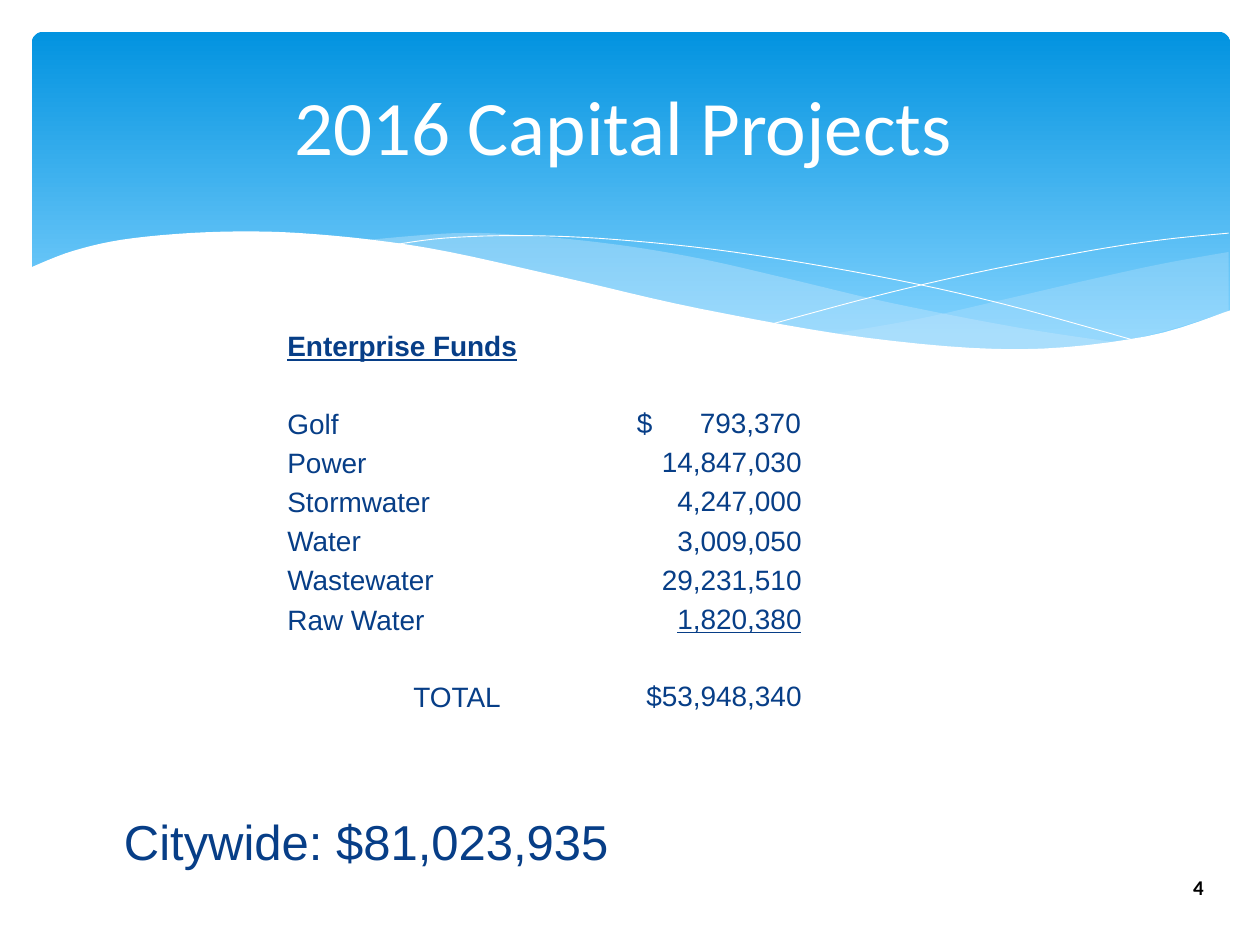
"""Build the 2016 capital projects slide with its wave banner."""
from lxml.etree import SubElement
from pptx import Presentation
from pptx.dml.color import RGBColor
from pptx.enum.shapes import MSO_SHAPE
from pptx.enum.text import MSO_ANCHOR, MSO_AUTO_SIZE, PP_ALIGN
from pptx.oxml.ns import qn
from pptx.util import Cm, Pt

SKY = RGBColor(0x02, 0x93, 0xE0)
LIGHT_SKY = RGBColor(0x83, 0xD3, 0xFE)
MIST = RGBColor(0xC6, 0xE7, 0xFC)
NAVY = RGBColor(0x07, 0x3E, 0x87)
WHITE = RGBColor(0xFF, 0xFF, 0xFF)
BLACK = RGBColor(0, 0, 0)

LINE_GAP, BLOCK_GAP, FIRST_GAP = 3.2, 25, 2.2

RIGHT_SWELL = (
    [(24.77, 5.08), (23.37, 5.33), (21.87, 5.66), (20.45, 5.99), (18.52, 6.43), (16.79, 6.73)],
    [(16.79, 6.73), (18.59, 6.96), (20.4, 7.06), (22.15, 6.96), (23.57, 6.65), (24.77, 6.27)],
)
MIDDLE_SWELL = (
    [(22.68, 6.93), (20.5, 6.6), (17.93, 6.1), (15.98, 5.64), (14.1, 5.21),
     (12.42, 4.93), (10.67, 4.75), (9.17, 4.7), (7.26, 4.85)],
    [(7.26, 4.85), (9.19, 5.16), (11.4, 5.64), (14.38, 6.3), (16.51, 6.71),
     (18.69, 6.99), (20.5, 7.06), (21.79, 7.02), (22.68, 6.93)],
)
FALLING_THREAD = [(7.85, 4.95), (8.97, 4.8), (10.57, 4.75), (12.42, 4.83),
                  (14.78, 5.08), (17.65, 5.56), (20.19, 6.12), (23.04, 6.91)]
RISING_THREAD = [(15.57, 6.53), (17.65, 5.97), (19.71, 5.49), (22, 5.05),
                 (23.47, 4.83), (24.77, 4.7)]
SHORE = [(24.82, 6.25), (23.11, 6.78), (20.55, 7.04), (17.48, 6.81), (14.1, 6.22),
         (11.35, 5.59), (8.64, 5), (6.35, 4.72), (4.5, 4.67), (2.69, 4.8),
         (1.5, 5.05), (0.58, 5.41)]
SHORE_BASE = [(0.58, 8.36), (24.82, 8.36)]

FUNDS = [("Golf", "$\t793,370"), ("Power", "14,847,030"), ("Stormwater", "4,247,000"),
         ("Water", "3,009,050"), ("Wastewater", "29,231,510"), ("Raw Water", "1,820,380")]


def smooth_curve(knots, steps=6):
    """Return points along a Catmull-Rom curve through the knots."""
    padded = [knots[0], *knots, knots[-1]]
    points = [knots[0]]
    for a, b, c, d in zip(padded, padded[1:], padded[2:], padded[3:]):
        for step in range(1, steps + 1):
            t = step / steps
            points.append(tuple(
                (2 * q + (r - p) * t + (2 * p - 5 * q + 4 * r - s) * t ** 2
                 + (3 * q - p - 3 * r + s) * t ** 3) / 2
                for p, q, r, s in zip(a, b, c, d)))
    return points


def write_line(frame, text, font="Arial", size=16, color=NAVY, bold=False,
               underline=False, align=PP_ALIGN.LEFT, before=0, indent=0, tab=None):
    """Add one formatted paragraph to a text frame."""
    first = frame.paragraphs[0]
    line = frame.add_paragraph() if first.runs else first
    line.alignment = align
    line.space_before = Pt(before)
    properties = line._p.get_or_add_pPr()
    properties.set("marL", str(Cm(indent)))
    properties.set("indent", "0")
    SubElement(properties, qn("a:buNone"))
    if tab:
        stops = SubElement(properties, qn("a:tabLst"))
        SubElement(stops, qn("a:tab"), pos=str(Cm(tab)), algn="r")
    run = line.add_run()
    run.text = text
    run.font.name, run.font.size = font, Pt(size)
    run.font.bold, run.font.underline = bold, underline
    run.font.color.rgb = color


class SlideBuilder:
    """Hold the current slide and draw its elements in one style."""

    def __init__(self, slide):
        self.slide = slide
        self.shapes = slide.shapes
        self.thread_color, self.thread_width = WHITE, Pt(0.5)

    def banner(self, left, top, width, height):
        """Draw the rounded gradient band."""
        band = self.shapes.add_shape(MSO_SHAPE.ROUNDED_RECTANGLE,
                                     Cm(left), Cm(top), Cm(width), Cm(height))
        band.adjustments[0] = 0.034
        band.shadow.inherit = False
        band.line.fill.background()
        band.fill.gradient()
        band.fill.gradient_angle = 270
        for stop, color, position in zip(band.fill.gradient_stops, (SKY, LIGHT_SKY), (0, 0.9)):
            stop.color.rgb, stop.position = color, position

    def wave(self, points, fill=None, opacity=100):
        """Draw a filled wave, or a thin thread when no fill is given."""
        start, *rest = [(Cm(x), Cm(y)) for x, y in points]
        builder = self.shapes.build_freeform(*start)
        builder.add_line_segments(rest, close=fill is not None)
        curve = builder.convert_to_shape()
        curve.shadow.inherit = False
        if fill is None:
            curve.fill.background()
            curve.line.color.rgb, curve.line.width = self.thread_color, self.thread_width
            return
        curve.line.fill.background()
        curve.fill.solid()
        curve.fill.fore_color.rgb = fill
        if opacity < 100:
            tint = curve.element.spPr.find(qn("a:solidFill")).find(qn("a:srgbClr"))
            SubElement(tint, qn("a:alpha"), val=str(opacity * 1000))

    def placeholder(self, index, left, top, width, height, anchor):
        """Place a template placeholder in front and return its text frame."""
        holder = self.slide.placeholders[index]
        holder.left, holder.top = Cm(left), Cm(top)
        holder.width, holder.height = Cm(width), Cm(height)
        holder.element.getparent().append(holder.element)
        frame = holder.text_frame
        frame.auto_size, frame.vertical_anchor = MSO_AUTO_SIZE.NONE, anchor
        return frame

    def text_box(self, left, top, width, height):
        """Add a wrapping text box and return its text frame."""
        box = self.shapes.add_textbox(Cm(left), Cm(top), Cm(width), Cm(height))
        frame = box.text_frame
        frame.word_wrap = True
        return frame


def main():
    """Build and save the slide."""
    deck = Presentation()
    deck.slide_width, deck.slide_height = Cm(25.4), Cm(19.05)
    page = SlideBuilder(deck.slides.add_slide(deck.slide_layouts[1]))

    page.banner(0.64, 0.64, 24.16, 6.86)
    for (upper, lower), opacity in ((RIGHT_SWELL, 29), (MIDDLE_SWELL, 40)):
        page.wave(smooth_curve(upper) + smooth_curve(lower), MIST, opacity)
    for thread in (FALLING_THREAD, RISING_THREAD):
        page.wave(smooth_curve(thread))
    page.wave(smooth_curve(SHORE) + SHORE_BASE, WHITE)

    names = page.placeholder(1, 5.54, 6.5, 17.98, 11.43, MSO_ANCHOR.TOP)
    title = page.placeholder(0, -0.13, 1.65, 25.4, 1.73, MSO_ANCHOR.MIDDLE)
    write_line(title, "2016 Capital Projects", font="Calibri", size=44, color=WHITE,
               align=PP_ALIGN.CENTER)

    page_number = page.text_box(23.66, 17.5, 1, 0.76)
    write_line(page_number, "4", font="Calibri", size=12, color=BLACK, bold=True,
               align=PP_ALIGN.CENTER)

    amounts = page.text_box(12.17, 8.05, 4.24, 11)
    amounts.margin_left = Cm(0.67)
    write_line(names, "Enterprise Funds", bold=True, underline=True, before=FIRST_GAP)
    for row, (fund, amount) in enumerate(FUNDS):
        tabbed = "\t" in amount
        write_line(names, fund, before=LINE_GAP if row else BLOCK_GAP)
        write_line(amounts, amount, before=LINE_GAP if row else FIRST_GAP,
                   align=PP_ALIGN.LEFT if tabbed else PP_ALIGN.RIGHT,
                   tab=3.3 if tabbed else None, underline=row == len(FUNDS) - 1)
    write_line(names, "TOTAL", before=BLOCK_GAP, indent=2.54)
    write_line(amounts, "$53,948,340", before=BLOCK_GAP, align=PP_ALIGN.RIGHT)

    citywide = page.text_box(-0.56, 16.23, 15.88, 1.45)
    write_line(citywide, "Citywide: $81,023,935", size=28, align=PP_ALIGN.CENTER)

    deck.save("out.pptx")


if __name__ == "__main__":
    main()
